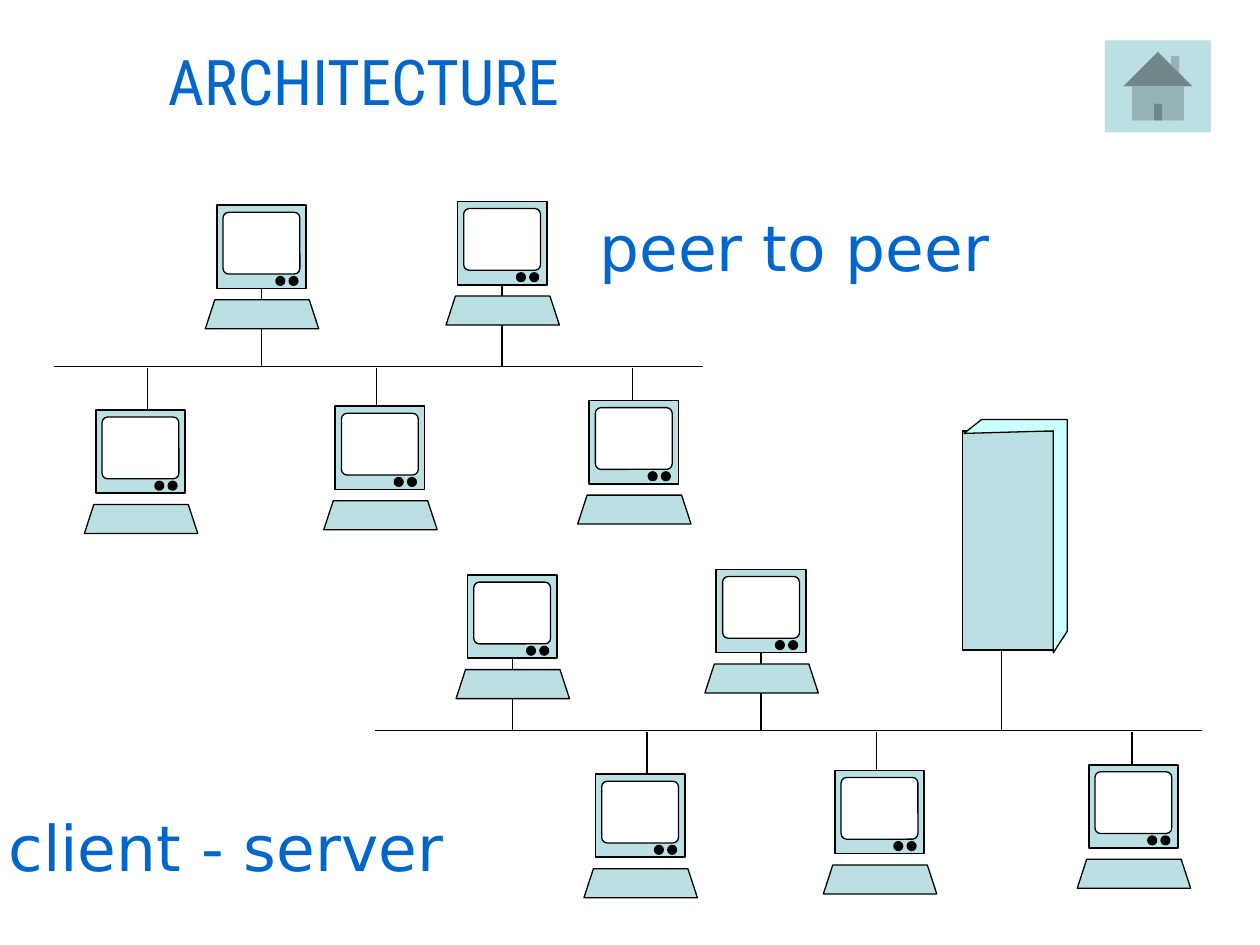
import dataclasses

import lxml.etree
import pptx
import pptx.dml.color
import pptx.enum.dml
import pptx.enum.shapes
import pptx.enum.text
import pptx.oxml.ns
import pptx.util

KIND = pptx.enum.shapes.MSO_SHAPE
COLS, ROWS = 100, 75


@dataclasses.dataclass(frozen=True)
class Theme:
    paper: str = "FFFFFF"
    ink: str = "000000"
    body: str = "BBE0E3"
    light: str = "CCFFFF"
    text: str = "0066CC"
    title: str = "Roboto Condensed"
    label: str = "DejaVu Sans"
    size: int = 36
    thin: float = 0.75
    thick: float = 1


THEME = Theme()


def grid(*cells):
    return [pptx.util.Inches(cell / 10) for cell in cells]


def tint(code):
    return pptx.dml.color.RGBColor.from_string(code)


def paint(shape, fill, width=THEME.thin):
    shape.shadow.inherit = False
    shape.fill.solid()
    shape.fill.fore_color.rgb = tint(fill)
    if width:
        shape.line.color.rgb = tint(THEME.ink)
        shape.line.width = pptx.util.Pt(width)
    else:
        shape.line.fill.background()
    return shape


def block(shapes, kind, box, fill, width=THEME.thin):
    return paint(shapes.add_shape(kind, *grid(*box)), fill, width)


def outline(shapes, points, fill):
    spots = [grid(*point) for point in points]
    pen = shapes.build_freeform(*spots[0])
    pen.add_line_segments(spots[1:], close=True)
    return paint(pen.convert_to_shape(), fill)


def wire(shapes, start, end):
    straight = pptx.enum.shapes.MSO_CONNECTOR.STRAIGHT
    line = shapes.add_connector(straight, *grid(*start, *end))
    line.line.color.rgb = tint(THEME.ink)
    line.line.width = pptx.util.Pt(THEME.thin)
    lxml.etree.SubElement(line._element.spPr, pptx.oxml.ns.qn("a:effectLst"))
    return line


def label(shapes, text, box, font):
    frame = shapes.add_textbox(*grid(*box)).text_frame
    frame.word_wrap = False
    frame.margin_left = frame.margin_right = 0
    line = frame.paragraphs[0]
    line.text = text
    line.alignment = pptx.enum.text.PP_ALIGN.CENTER
    line.font.name = font
    line.font.size = pptx.util.Pt(THEME.size)
    line.font.color.rgb = tint(THEME.text)


def station(shapes, x, y):
    parts = shapes.add_group_shape().shapes
    case = block(parts, KIND.RECTANGLE, (x, y, 7.1, 6.6), THEME.body, THEME.thick)
    glass = block(parts, KIND.ROUNDED_RECTANGLE, (x + 0.5, y + 0.55, 6.1, 4.9), THEME.paper)
    glass.adjustments[0] = 0.09
    for shift in (4.7, 5.75):
        block(parts, KIND.OVAL, (x + shift, y + 5.65, 0.7, 0.7), THEME.ink)
    left, right, top, base = x - 0.9, x + 8.1, y + 7.5, y + 9.8
    keys = [(left, base), (left + 0.75, top), (right - 0.75, top), (right, base)]
    outline(parts, keys, THEME.body)
    return case


def network(shapes, bus, upper, lower):
    left, right, level = bus
    wire(shapes, (left, level), (right, level))
    for x, y in upper:
        mid = x + 3.55
        drop = wire(shapes, (mid, y + 6.6), (mid, level))
        drop.begin_connect(station(shapes, x, y), 2)
    for x, y, shift in lower:
        wire(shapes, (x + shift, level + 0.1), (x + shift, y + 3.2))
        station(shapes, x, y)


def server(shapes, level):
    block(shapes, KIND.RECTANGLE, (76.4, 34.2, 7.3, 17.4), THEME.body)
    side = [(76.5, 34.4), (77.9, 33.3), (84.7, 33.3),
            (84.7, 50.1), (83.6, 51.8), (83.6, 34.2)]
    outline(shapes, side, THEME.light)
    wire(shapes, (79.5, 51.5), (79.5, level))


def main():
    deck = pptx.Presentation()
    deck.slide_width, deck.slide_height = grid(COLS, ROWS)
    slide = deck.slides.add_slide(deck.slide_layouts[6])
    back = slide.background.fill
    back.patterned()
    back.pattern = pptx.enum.dml.MSO_PATTERN.NARROW_HORIZONTAL
    back.fore_color.rgb = back.back_color.rgb = tint(THEME.paper)

    shapes = slide.shapes
    label(shapes, "ARCHITECTURE", (4.3, 2.9, 49.1, 9.7), THEME.title)
    label(shapes, "peer to peer", (47, 16.1, 32.1, 4.6), THEME.label)
    label(shapes, "client - server", (0.3, 63.7, 35.3, 4.1), THEME.label)

    across, down = 39.65, 28.9
    lower = [(7.6, 32.55, 4.1), (26.6, 32.25, 3.3), (46.75, 31.8, 3.45)]
    moved = [(x + across, y + down, shift) for x, y, shift in lower]
    network(shapes, (4.3, 55.8, 29.1), [(17.2, 16.3), (36.3, 16)], lower)
    server(shapes, 58)
    network(shapes, (29.8, 95.4, 58), [(37.1, 45.65), (56.85, 45.2)], moved)
    block(shapes, KIND.ACTION_BUTTON_HOME, (87.7, 3.2, 8.4, 7.3), THEME.body, 0)
    deck.save("out.pptx")


if __name__ == "__main__":
    main()
